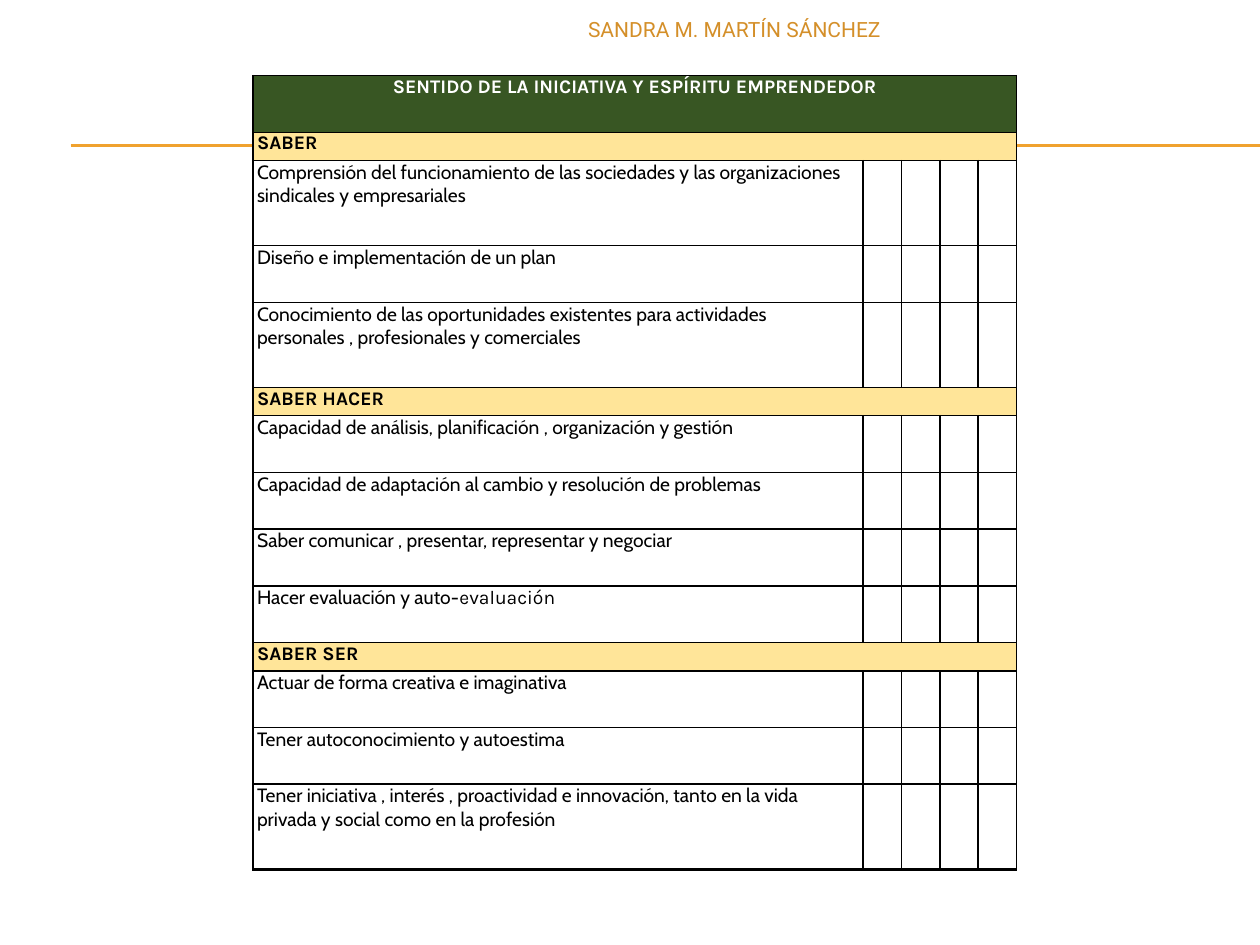
from pptx import Presentation
from pptx.dml.color import RGBColor
from pptx.enum.shapes import MSO_CONNECTOR
from pptx.enum.text import PP_ALIGN
from pptx.oxml import parse_xml
from pptx.oxml.ns import nsdecls
from pptx.util import Inches, Pt

BLACK = RGBColor(0x00, 0x00, 0x00)
WHITE = RGBColor(0xFF, 0xFF, 0xFF)
GREEN = RGBColor(0x38, 0x56, 0x23)
CREAM = RGBColor(0xFF, 0xE5, 0x99)
ORANGE = RGBColor(0xF0, 0xA2, 0x2E)
OCHRE = RGBColor(0xD4, 0x8F, 0x29)

AUTHOR = "SANDRA M. MARTÍN SÁNCHEZ"

# Row kinds: fill and font of the first cell
STYLES = {
    "title": (GREEN, {"name": "Karla", "bold": True}, WHITE),
    "section": (CREAM, {"name": "Karla", "bold": True}, BLACK),
    "item": (None, {"name": "Cabin", "bold": False}, BLACK),
}

# Kind, height in row units, text (a tuple adds a second run in Karla)
ROWS = [
    ("title", 2, "SENTIDO DE LA INICIATIVA Y ESPÍRITU EMPRENDEDOR"),
    ("section", 1, "SABER"),
    ("item", 3, "Comprensión del funcionamiento de las sociedades y las "
                "organizaciones sindicales y empresariales"),
    ("item", 2, "Diseño e implementación de un plan"),
    ("item", 3, "Conocimiento de las oportunidades existentes para actividades "
                "personales , profesionales y comerciales"),
    ("section", 1, "SABER HACER"),
    ("item", 2, "Capacidad de análisis, planificación , organización y gestión"),
    ("item", 2, "Capacidad de adaptación al cambio y resolución de problemas"),
    ("item", 2, "Saber comunicar , presentar, representar y negociar"),
    ("item", 2, ("Hacer evaluación y auto-", "evaluación")),
    ("section", 1, "SABER SER"),
    ("item", 2, "Actuar de forma creativa e imaginativa"),
    ("item", 2, "Tener autoconocimiento y autoestima"),
    ("item", 3, "Tener iniciativa , interés , proactividad e innovación, tanto en "
                "la vida privada y social como en la profesión"),
]

LEFT, TOP, WIDTH, HEIGHT = 2.01, 0.6, 6.06, 6.3
TEXT_COL, MARK_COLS = 4.84, 4
COL_WIDTHS = [TEXT_COL] + [(WIDTH - TEXT_COL) / MARK_COLS] * MARK_COLS
UNIT = HEIGHT / sum(units for _, units, _ in ROWS)


def add_run(p, text, color, **font):
    r = p.add_run()
    r.text = text
    for key, value in font.items():
        setattr(r.font, key, value)
    r.font.color.rgb = color


def set_borders(cell, bottom):
    tcPr = cell._tc.get_or_add_tcPr()
    for side, width in (("L", 1), ("R", 1), ("T", 1), ("B", bottom)):
        tcPr.append(parse_xml(
            f'<a:ln{side} {nsdecls("a")} w="{Pt(width)}"><a:solidFill>'
            f'<a:srgbClr val="{BLACK}"/></a:solidFill></a:ln{side}>'))


prs = Presentation()
prs.slide_width, prs.slide_height = Inches(10), Inches(7.5)
s = prs.slides.add_slide(prs.slide_layouts[6])

# Double rule behind the table
for y in (1.15, 1.16):
    rule = s.shapes.add_connector(MSO_CONNECTOR.STRAIGHT, Inches(0.56), Inches(y),
                                  prs.slide_width, Inches(y))
    rule.line.color.rgb = ORANGE
    rule.line.width = Pt(0.75)
    rule._element.spPr.append(parse_xml(f'<a:effectLst {nsdecls("a")}/>'))

# Competence table
table = s.shapes.add_table(len(ROWS), len(COL_WIDTHS), Inches(LEFT), Inches(TOP),
                           Inches(WIDTH), Inches(HEIGHT)).table
table.first_row = table.horz_banding = False
for col, width in zip(table.columns, COL_WIDTHS):
    col.width = Inches(width)

for row, (kind, units, text) in zip(table.rows, ROWS):
    row.height = Inches(units * UNIT)
    fill, font, color = STYLES[kind]
    cells = list(row.cells)
    for cell in cells:
        cell.margin_left = cell.margin_right = Inches(0.03)
        cell.margin_top = cell.margin_bottom = 0
        set_borders(cell, 2.25 if text == ROWS[-1][2] else 1)
        if fill is None:
            cell.fill.background()
        else:
            cell.fill.solid()
            cell.fill.fore_color.rgb = fill
        cell.text_frame.paragraphs[0]._p.append(
            parse_xml(f'<a:endParaRPr {nsdecls("a")} sz="1100"/>'))
    if kind != "item":
        cells[0].merge(cells[-1])

    p = cells[0].text_frame.paragraphs[0]
    p.space_after = Pt(8)
    p.alignment = PP_ALIGN.CENTER if kind == "title" else PP_ALIGN.LEFT
    first, *rest = (text,) if isinstance(text, str) else text
    add_run(p, first, color, size=Pt(11), **font)
    for part in rest:
        add_run(p, part, color, size=Pt(11), name="Karla", bold=False)

# Author line
tf = s.shapes.add_textbox(Inches(3.92), Inches(0.08), Inches(3.17), Inches(0.32)).text_frame
tf.word_wrap = True
p = tf.paragraphs[0]
p.alignment = PP_ALIGN.RIGHT
add_run(p, AUTHOR, OCHRE, size=Pt(12), name="Roboto")

prs.save("out.pptx")
